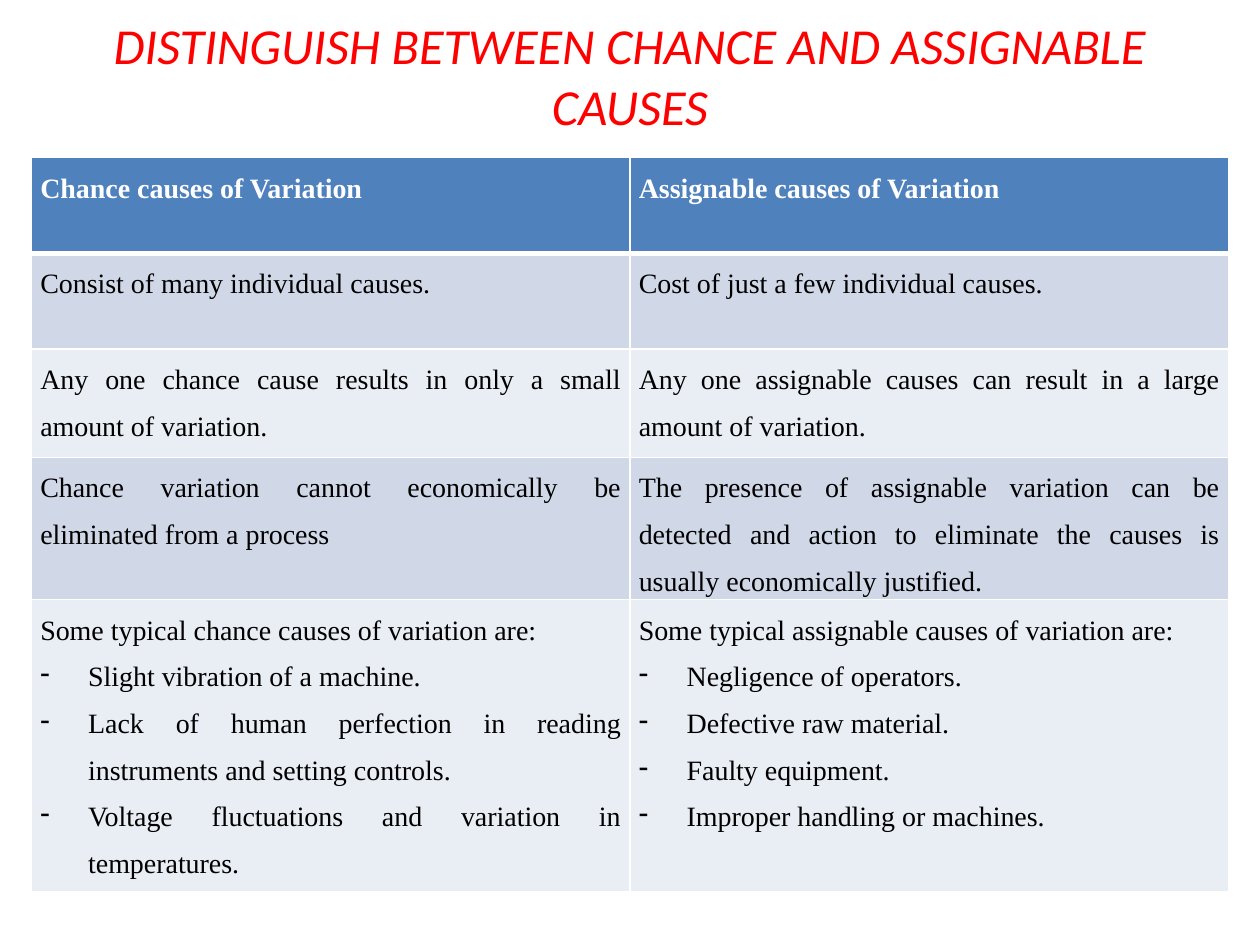
from lxml import etree
from pptx import Presentation
from pptx import util as u
from pptx.dml.color import RGBColor
from pptx.enum import text
from pptx.oxml import ns

HUES = {"title": "FF0000", "head": "4F81BD", "dark": "D0D8E8",
        "light": "E9EDF4", "line": "FFFFFF", "ink": "000000"}
WIDE, HIGH = 10, 7.5
EDGE = WIDE / 40
TALL = [0.76, 0.76, 0.86, 1.13, 2.32]
HANG = 0.38

ROWS = [
    [["Chance causes of Variation"], ["Assignable causes of Variation"]],
    [["Consist of many individual causes."],
     ["Cost of just a few individual causes."]],
    [["Any one chance cause results in only a small amount of variation."],
     ["Any one assignable causes can result in a large amount of variation."]],
    [["Chance variation cannot economically be eliminated from a process"],
     ["The presence of assignable variation can be detected and action to "
      "eliminate the causes is usually economically justified."]],
    [["Some typical chance causes of variation are:",
      "Slight vibration of a machine.",
      "Lack of human perfection in reading instruments and setting controls.",
      "Voltage fluctuations and variation in temperatures."],
     ["Some typical assignable causes of variation are:",
      "Negligence of operators.",
      "Defective raw material.",
      "Faulty equipment.",
      "Improper handling or machines."]],
]


def hue(name):
    return RGBColor.from_string(HUES[name])


def style(para, face, size, name):
    font = para.font
    font.name, font.size = face, u.Pt(size)
    font.color.rgb = hue(name)
    return font


def add_title(slide, words):
    box = slide.shapes.title
    box.left, box.top = u.Inches(WIDE / 20), u.Inches(0.08)
    box.width, box.height = u.Inches(WIDE * 0.9), u.Inches(1.03)
    frame = box.text_frame
    frame.text = words
    frame.word_wrap = True
    frame.auto_size = text.MSO_AUTO_SIZE.NONE
    frame.vertical_anchor = text.MSO_ANCHOR.MIDDLE
    para = frame.paragraphs[0]
    para.alignment = text.PP_ALIGN.CENTER
    style(para, "Calibri", 28.8, "title").italic = True


def add_dash(para):
    props = para._p.get_or_add_pPr()
    props.set("marL", str(u.Inches(HANG)))
    props.set("indent", str(-u.Inches(HANG)))
    etree.SubElement(props, ns.qn("a:buChar")).set("char", "-")


def add_edge(cell, side, width):
    props = cell._tc.get_or_add_tcPr()
    line = etree.SubElement(props, ns.qn("a:ln" + side), w=str(u.Pt(width)))
    fill = etree.SubElement(line, ns.qn("a:solidFill"))
    etree.SubElement(fill, ns.qn("a:srgbClr"), val=HUES["line"])


def fill_cell(cell, lines, row):
    head = row == 0
    cell.margin_left = cell.margin_right = u.Inches(0.07)
    cell.margin_top = cell.margin_bottom = 0
    for side in "LRTB":
        thick = (head and side == "B") or (row == 1 and side == "T")
        add_edge(cell, side, 3 if thick else 1)
    cell.fill.solid()
    cell.fill.fore_color.rgb = hue("head" if head else ("light", "dark")[row % 2])
    frame = cell.text_frame
    frame.text = "\n".join(lines)
    for spot, para in enumerate(frame.paragraphs):
        para.alignment = text.PP_ALIGN.JUSTIFY
        para.line_spacing = 1.5
        if spot:
            add_dash(para)
        style(para, "Times New Roman", 16, "line" if head else "ink").bold = head


def add_grid(slide, rows):
    cols = len(rows[0])
    span = WIDE - 2 * EDGE
    frame = slide.shapes.add_table(
        len(rows), cols, u.Inches(EDGE), u.Inches(HIGH / 6),
        u.Inches(span), u.Inches(sum(TALL)))
    grid = frame.table
    for col in grid.columns:
        col.width = u.Inches(span / cols)
    for row, (cells, tall) in enumerate(zip(rows, TALL)):
        grid.rows[row].height = u.Inches(tall)
        for col, lines in enumerate(cells):
            fill_cell(grid.cell(row, col), lines, row)


def main():
    deck = Presentation()
    deck.slide_width, deck.slide_height = u.Inches(WIDE), u.Inches(HIGH)
    slide = deck.slides.add_slide(deck.slide_layouts[5])
    add_title(slide, "DISTINGUISH BETWEEN CHANCE AND ASSIGNABLE CAUSES")
    add_grid(slide, ROWS)
    deck.save("out.pptx")


if __name__ == "__main__":
    main()
